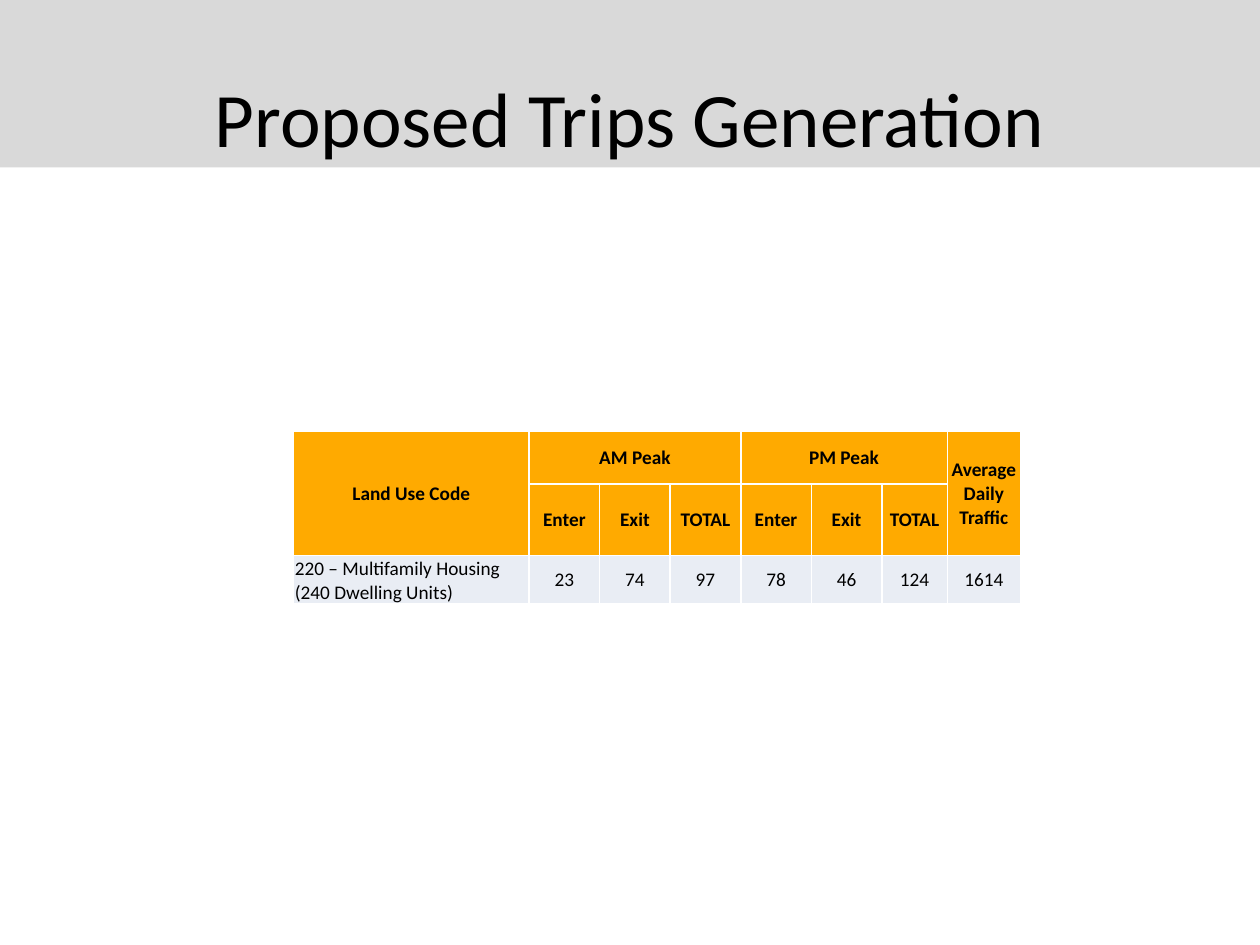
from lxml import etree
from pptx import Presentation
from pptx.dml.color import RGBColor
from pptx.enum.shapes import MSO_SHAPE
from pptx.enum.text import MSO_ANCHOR, PP_ALIGN
from pptx.oxml.ns import qn
from pptx.util import Inches, Pt

RECTANGLE = MSO_SHAPE.RECTANGLE
MIDDLE, BOTTOM = MSO_ANCHOR.MIDDLE, MSO_ANCHOR.BOTTOM
LEFT, CENTER = PP_ALIGN.LEFT, PP_ALIGN.CENTER

FONT = "Calibri"
COLORS = {
    "band": "D9D9D9",
    "text": "000000",
    "header": "FFAA00",
    "body": "E9EDF4",
    "border": "FFFFFF",
}
COLUMN_WIDTHS = [1.87, 0.56, 0.56, 0.56, 0.56, 0.56, 0.52, 0.58]
ROW_HEIGHTS = [0.42, 0.57, 0.38]
HEADER_ROWS = 2
PEAK_COLUMNS = ["Enter", "Exit", "TOTAL"]
TRIP_ROWS = [
    ["Land Use Code", "AM Peak", "", "", "PM Peak", "", "", "Average Daily Traffic"],
    ["", *PEAK_COLUMNS, *PEAK_COLUMNS, ""],
    ["220 – Multifamily Housing\n(240 Dwelling Units)",
     "23", "74", "97", "78", "46", "124", "1614"],
]
# First and last cell of each merged header, as (row, column)
MERGES = [((0, 0), (1, 0)), ((0, 1), (0, 3)), ((0, 4), (0, 6)), ((0, 7), (1, 7))]


def color(name):
    return RGBColor.from_string(COLORS[name])


def format_text(text_frame, size, bold, alignment):
    for para in text_frame.paragraphs:
        para.alignment = alignment
        para.font.size = Pt(size)
        for span in para.runs:
            span.font.name = FONT
            span.font.size = Pt(size)
            span.font.bold = bold
            span.font.color.rgb = color("text")


def add_header(page, left, top, width, height):
    # Grey band across the page
    band = page.shapes.add_shape(RECTANGLE, left, top, width, height)
    band.shadow.inherit = False
    band.fill.solid()
    band.fill.fore_color.rgb = color("band")
    band.line.fill.background()

    # Title, hanging slightly below the band
    box = page.shapes.add_textbox(
        left + Inches(0.5), top + Inches(0.33), width - Inches(1), Inches(1.25))
    frame = box.text_frame
    frame.word_wrap = True
    frame.vertical_anchor = MIDDLE
    frame.text = "Proposed Trips Generation"
    format_text(frame, 44, False, CENTER)


def add_borders(cell):
    properties = cell._tc.get_or_add_tcPr()
    for index, side in enumerate(["lnL", "lnR", "lnT", "lnB"]):
        line = etree.Element(qn(f"a:{side}"), w=str(Pt(1)))
        fill = etree.SubElement(line, qn("a:solidFill"))
        etree.SubElement(fill, qn("a:srgbClr"), val=COLORS["border"])
        properties.insert(index, line)


def style_cell(cell, is_header, is_label):
    cell.margin_left = cell.margin_right = cell.margin_top = Inches(0.01)
    cell.margin_bottom = 0
    cell.vertical_anchor = BOTTOM if is_label else MIDDLE
    cell.fill.solid()
    cell.fill.fore_color.rgb = color("header" if is_header else "body")
    add_borders(cell)
    format_text(cell.text_frame, 11, is_header, LEFT if is_label else CENTER)


def add_trip_table(page, left, top, width, height):
    table = page.shapes.add_table(
        len(ROW_HEIGHTS), len(COLUMN_WIDTHS), left, top, width, height).table
    table.horz_banding = False
    for column, column_width in zip(table.columns, COLUMN_WIDTHS):
        column.width = Inches(column_width)
    for row, row_height in zip(table.rows, ROW_HEIGHTS):
        row.height = Inches(row_height)

    # Cell text and style
    for row_index, values in enumerate(TRIP_ROWS):
        is_header = row_index < HEADER_ROWS
        for column_index, value in enumerate(values):
            cell = table.cell(row_index, column_index)
            cell.text = value
            style_cell(cell, is_header, not is_header and column_index == 0)

    # Merged headers
    for first, last in MERGES:
        table.cell(*first).merge(table.cell(*last))


def main():
    deck = Presentation()
    deck.slide_width, deck.slide_height = Inches(10), Inches(7.5)
    page = deck.slides.add_slide(deck.slide_layouts[6])
    add_header(page, 0, Inches(-0.03), deck.slide_width, Inches(1.36))
    add_trip_table(page, Inches(2.33), Inches(3.42),
                   Inches(sum(COLUMN_WIDTHS)), Inches(sum(ROW_HEIGHTS)))
    deck.save("out.pptx")


if __name__ == "__main__":
    main()
